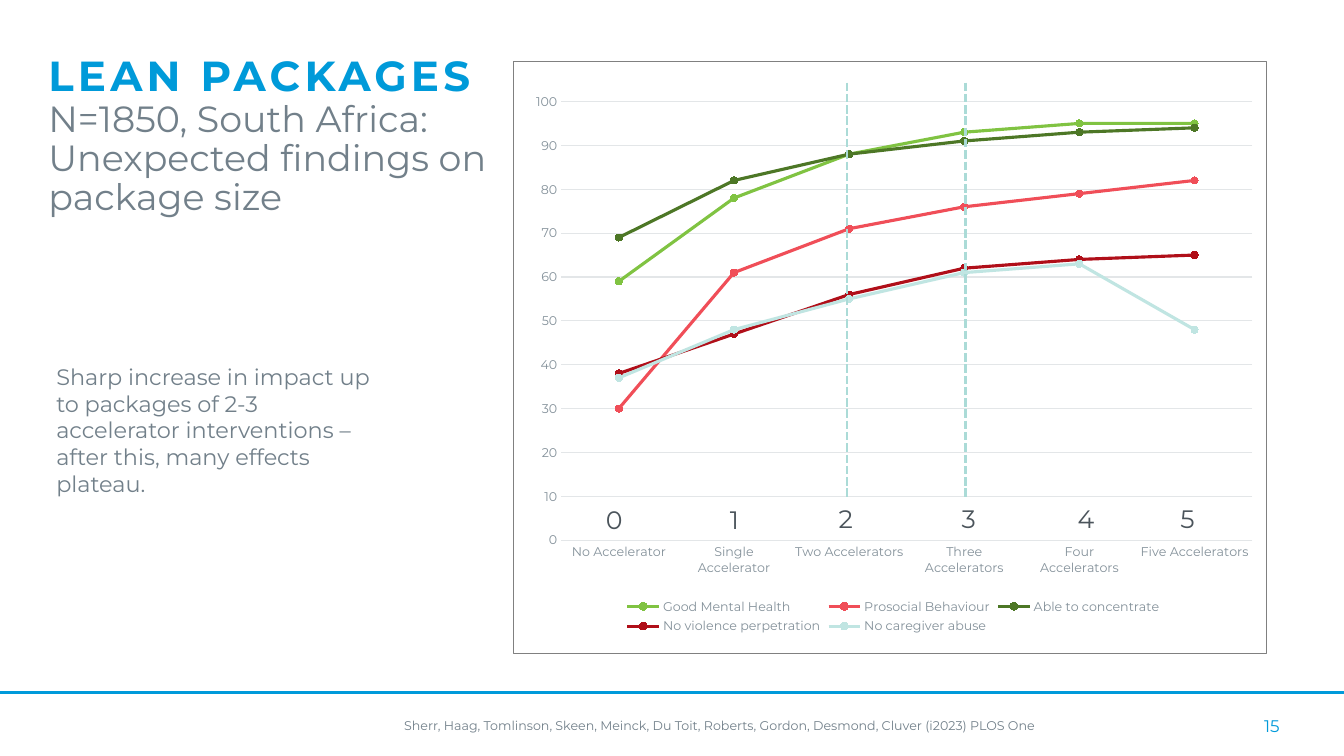
from pptx import Presentation
from pptx.chart.data import CategoryChartData
from pptx.dml.color import RGBColor
from pptx.enum.chart import XL_CHART_TYPE, XL_LEGEND_POSITION, XL_MARKER_STYLE, XL_TICK_MARK
from pptx.enum.dml import MSO_LINE
from pptx.enum.shapes import MSO_CONNECTOR, MSO_SHAPE
from pptx.enum.text import MSO_ANCHOR, MSO_AUTO_SIZE, PP_ALIGN
from pptx.oxml import parse_xml
from pptx.oxml.ns import nsdecls, qn
from pptx.util import Inches, Pt

FACE = "Montserrat"
BLUE, GREY, DARK, PALE, RULE = "009ADA", "72808A", "4B545B", "84919A", "E3E6E8"
WIDE, HIGH = 13.33, 7.5

deck = Presentation()
deck.slide_width, deck.slide_height = Inches(WIDE), Inches(HIGH)
slide = deck.slides.add_slide(deck.slide_layouts[5])
shapes = slide.shapes
hue = RGBColor.from_string


def write(text, at, size=16, color=GREY, bold=False, align=PP_ALIGN.LEFT, box=None):
    """Place text in a new text box, or in the given box, and return its paragraph."""
    place = [Inches(n) for n in at]
    box = box or shapes.add_textbox(*place)
    box.left, box.top, box.width, box.height = place
    frame = box.text_frame
    frame.word_wrap = True
    frame.auto_size = MSO_AUTO_SIZE.NONE
    frame.vertical_anchor = MSO_ANCHOR.TOP
    para = frame.paragraphs[0]
    para.alignment = align
    run = para.add_run()
    run.text = text
    style(run.font, size, color, bold)
    return para


def style(font, size, color, bold=False):
    font.name, font.size, font.bold = FACE, Pt(size), bold
    font.color.rgb = hue(color)


# Title and message
head = write("LEAN PACKAGES ", (0.38, 0.5, 4.55, 1.74), size=30, color="009AD9",
             bold=True, box=shapes.title)
head.line_spacing = 0.9
head.runs[0].font._element.set("spc", "300")
sub = head.add_run()
sub.text = "N=1850, South Africa: Unexpected findings on package size"
style(sub.font, 26, GREY)
write("Sharp increase in impact up to packages of 2-3 accelerator interventions – "
      "after this, many effects plateau.", (0.46, 3.55, 3.41, 1.45))

# Framed chart
frame = shapes.add_shape(MSO_SHAPE.RECTANGLE, Inches(5.09), Inches(0.61),
                         Inches(7.47), Inches(5.87))
frame.shadow.inherit = False
frame.fill.background()
frame.line.color.rgb = hue("808080")
frame.line.width = Pt(0.25)

lines = [
    ("Good Mental Health", "80C342", (59, 78, 88, 93, 95, 95)),
    ("Prosocial Behaviour", "F04E58", (30, 61, 71, 76, 79, 82)),
    ("Able to concentrate", "4D7726", (69, 82, 88, 91, 93, 94)),
    ("No violence perpetration", "B00F19", (38, 47, 56, 62, 64, 65)),
    ("No caregiver abuse", "C0E5E2", (37, 48, 55, 61, 63, 48)),
]
data = CategoryChartData(number_format="0")
data.categories = ["No Accelerator", "Single Accelerator", "Two Accelerators",
                   "Three Accelerators", "Four Accelerators", "Five Accelerators"]
for name, _, vals in lines:
    data.add_series(name, vals)
chart = shapes.add_chart(XL_CHART_TYPE.LINE_MARKERS, Inches(5.16), Inches(0.82),
                         Inches(7.4), Inches(5.51), data).chart
style(chart.font, 10, DARK)
chart.has_title = False
chart.has_legend = True
chart.legend.position = XL_LEGEND_POSITION.BOTTOM
chart.legend.include_in_layout = False
style(chart.legend.font, 9, PALE)
chart.plots[0].vary_by_categories = False

for series, (_, color, _) in zip(chart.plots[0].series, lines):
    series.smooth = False
    series.format.line.color.rgb = hue(color)
    series.format.line.width = Pt(2.25)
    mark = series.marker
    mark.style, mark.size = XL_MARKER_STYLE.CIRCLE, 5
    mark.format.fill.solid()
    mark.format.fill.fore_color.rgb = hue(color)
    mark.format.line.color.rgb = hue(color)

cats, scale = chart.category_axis, chart.value_axis
for axis in (cats, scale):
    axis.major_tick_mark = axis.minor_tick_mark = XL_TICK_MARK.NONE
    style(axis.tick_labels.font, 9, PALE)
scale.minimum_scale, scale.maximum_scale, scale.major_unit = 0, 100, 10
scale.format.line.fill.background()
for line in (cats.format.line, scale.major_gridlines.format.line):
    line.color.rgb = hue(RULE)
    line.width = Pt(0.75)

# Inner plot area, in shares of the chart
area = chart._chartSpace.find(".//" + qn("c:plotArea"))
for old in area.findall(qn("c:layout")):
    area.remove(old)
spots = "".join(f'<c:{tag} val="{val}"/>' for tag, val in (
    ("layoutTarget", "inner"), ("xMode", "edge"), ("yMode", "edge"),
    ("x", 0.055), ("y", 0.034), ("w", 0.926), ("h", 0.79)))
area.insert(0, parse_xml(
    f'<c:layout {nsdecls("c")}><c:manualLayout>{spots}</c:manualLayout></c:layout>'))

# Package size markers and footer rule
for x1, y1, x2, y2, color, dash in (
        (8.4, 0.82, 8.4, 4.95, "ABDBD7", MSO_LINE.SQUARE_DOT),
        (9.58, 0.82, 9.58, 4.95, "ABDBD7", MSO_LINE.SQUARE_DOT),
        (0, 6.87, WIDE, 6.87, BLUE, None)):
    rule = shapes.add_connector(MSO_CONNECTOR.STRAIGHT, *map(Inches, (x1, y1, x2, y2)))
    rule.line.color.rgb = hue(color)
    rule.line.width = Pt(2)
    rule.line.dash_style = dash
    rule._element.spPr.append(parse_xml(f'<a:effectLst {nsdecls("a")}/>'))

for count, left in enumerate((5.91, 7.14, 8.22, 9.44, 10.59, 11.61)):
    top = 4.95 if count < 2 else 4.94
    write(str(count), (left, top, 0.48, 0.39), size=18, color=DARK)

# Footer
write("Sherr, Haag, Tomlinson, Skeen, Meinck, Du Toit, Roberts, Gordon, Desmond, "
      "Cluver (i2023) PLOS One", (3.91, 7.07, 9.82 - 0.5, 0.25), size=9)
write("15", (9.79, 7.05, 3, 0.4), size=12, color=BLUE, align=PP_ALIGN.RIGHT)

deck.save("out.pptx")
